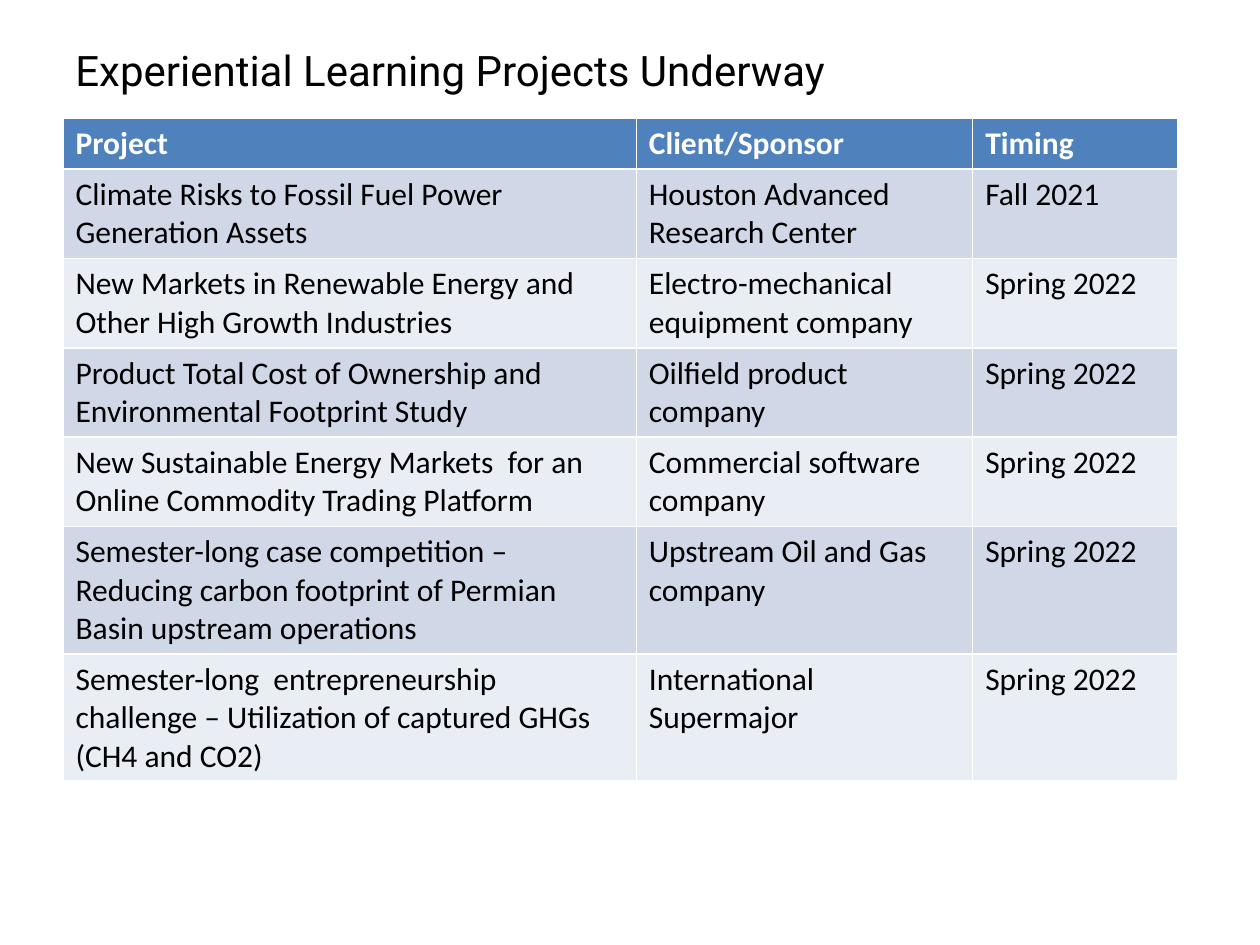
"""Build the slide listing experiential learning projects."""
from pptx import Presentation
from pptx.dml.color import RGBColor
from pptx.enum.text import MSO_ANCHOR
from pptx.util import Inches, Pt

TOP = MSO_ANCHOR.TOP
COLS = [4.55, 2.67, 1.63]
HEADER_H, LINE_H, PAD_H = 0.4, 0.3, 0.11
BANDS = ["E9EDF4", "D0D8E8"]
ROWS = [
    (1, "Project", "Client/Sponsor", "Timing"),
    (2, "Climate Risks to Fossil Fuel Power Generation Assets",
     "Houston Advanced Research Center", "Fall 2021"),
    (2, "New Markets in Renewable Energy and Other High Growth Industries",
     "Electro-mechanical equipment company", "Spring 2022"),
    (2, "Product Total Cost of Ownership and Environmental Footprint Study",
     "Oilfield product company", "Spring 2022"),
    (2, "New Sustainable Energy Markets  for an Online Commodity Trading Platform",
     "Commercial software company", "Spring 2022"),
    (3, "Semester-long case competition – Reducing carbon footprint of Permian "
        "Basin upstream operations",
     "Upstream Oil and Gas company", "Spring 2022"),
    (3, "Semester-long  entrepreneurship challenge – Utilization of captured "
        "GHGs (CH4 and CO2)",
     "International Supermajor", "Spring 2022"),
]


def rgb(color):
    return RGBColor.from_string(color)


def style(p, name, size, color, bold=False):
    p.font.name, p.font.size, p.font.bold = name, Pt(size), bold
    p.font.color.rgb = rgb(color)


prs = Presentation()
prs.slide_width, prs.slide_height = Inches(10), Inches(7.5)
s = prs.slides.add_slide(prs.slide_layouts[6])

tf = s.shapes.add_textbox(Inches(0.5), Inches(0.3), Inches(9), Inches(0.45)).text_frame
tf.word_wrap = True
tf.vertical_anchor = TOP
tf.text = "Experiential Learning Projects Underway"
style(tf.paragraphs[0], "Roboto", 24, "000000")

heights = [HEADER_H] + [PAD_H + LINE_H * row[0] for row in ROWS[1:]]
table = s.shapes.add_table(len(ROWS), len(COLS), Inches(0.5), Inches(0.94),
                           Inches(sum(COLS)), Inches(sum(heights))).table
for col, width in zip(table.columns, COLS):
    col.width = Inches(width)
for i, (lines, *texts) in enumerate(ROWS):
    header = i == 0
    table.rows[i].height = Inches(heights[i])
    for j, text in enumerate(texts):
        cell = table.cell(i, j)
        cell.text = text
        cell.fill.solid()
        cell.fill.fore_color.rgb = rgb("4F81BD" if header else BANDS[i % 2])
        style(cell.text_frame.paragraphs[0], "Calibri", 18,
              "FFFFFF" if header else "000000", header)

prs.save("out.pptx")
